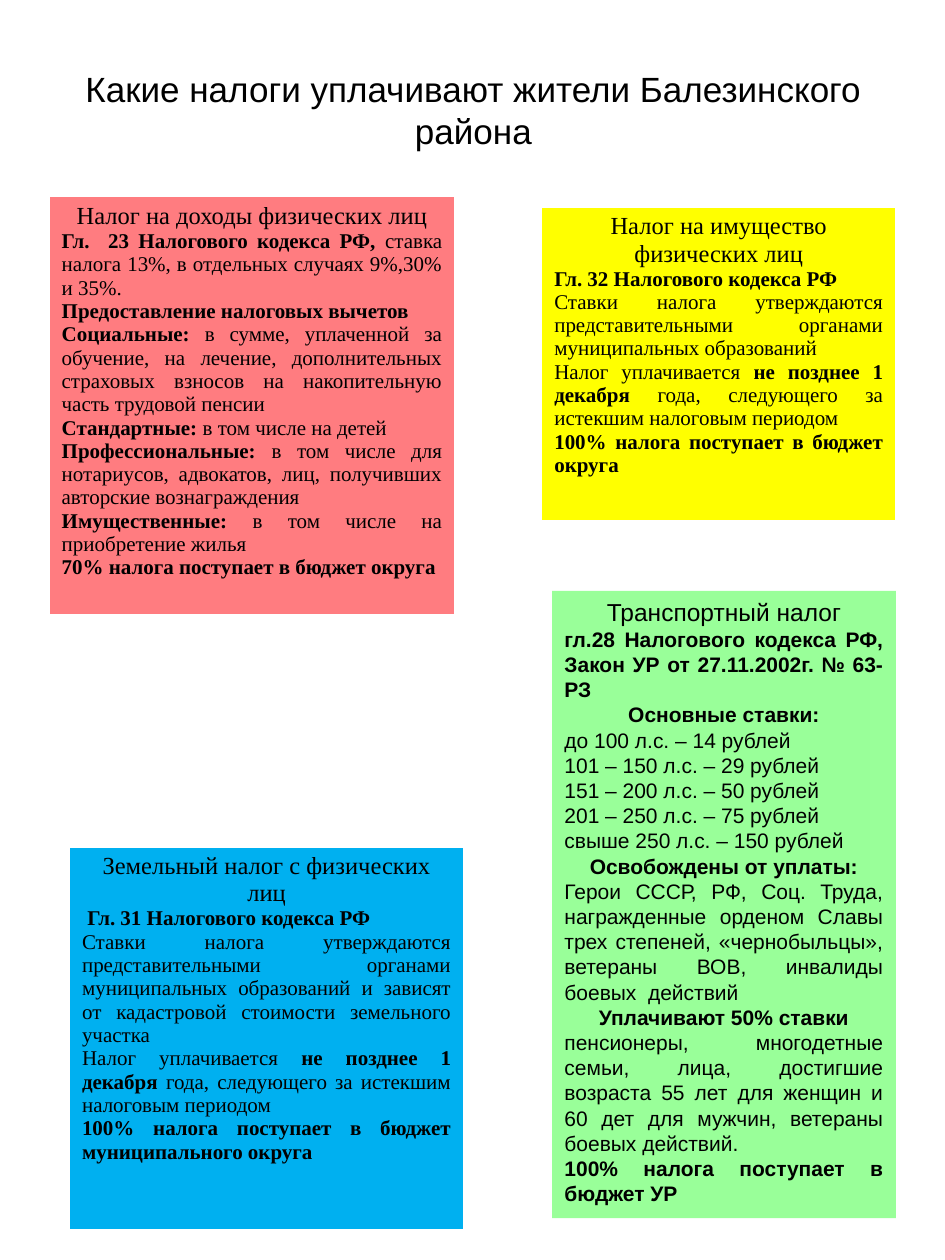
from lxml.etree import SubElement
from pptx import Presentation
from pptx.dml.color import RGBColor
from pptx.enum.shapes import MSO_SHAPE
from pptx.enum.text import MSO_ANCHOR, MSO_AUTO_SIZE, PP_ALIGN
from pptx.oxml.ns import qn
from pptx.util import Cm, Pt


def color(value):
    return RGBColor.from_string(value)


def write(p, text, *, font, size, align=PP_ALIGN.JUSTIFY, hex_color="000000"):
    """Fill a paragraph; parts between ** marks are bold."""
    p.alignment = align
    for i, part in enumerate(text.split("**")):
        if part:
            r = p.add_run()
            r.text = part
            r.font.name, r.font.size = font, Pt(size)
            r.font.bold = i % 2 == 1
            r.font.color.rgb = color(hex_color)


class TaxSlide:
    serif, sans = "Times New Roman", "Arial"
    title_size, heading_size, body_size = 20, 14, 12
    borders = {"a:lnL": 1, "a:lnR": 1, "a:lnT": 1, "a:lnB": 3}

    def __init__(self, prs):
        self.s = prs.slides.add_slide(prs.slide_layouts[6])

    def fill_text(self, tf, heading, lines, font):
        """Centred heading, then justified lines; a leading ^ centres a line."""
        tf.word_wrap = True
        write(tf.paragraphs[0], heading, font=font, size=self.heading_size,
              align=PP_ALIGN.CENTER)
        for line in lines:
            align = PP_ALIGN.CENTER if line.startswith("^") else PP_ALIGN.JUSTIFY
            write(tf.add_paragraph(), line.removeprefix("^"), font=font,
                  size=self.body_size, align=align)

    def title(self, text, box):
        tf = self.s.shapes.add_textbox(*map(Cm, box)).text_frame
        tf.word_wrap = True
        tf.vertical_anchor = MSO_ANCHOR.MIDDLE
        write(tf.paragraphs[0], text, font=self.sans, size=self.title_size,
              align=PP_ALIGN.CENTER)

    def table(self, heading, lines, box, fill):
        cell = self.s.shapes.add_table(1, 1, *map(Cm, box)).table.cell(0, 0)
        self.fill_text(cell.text_frame, heading, lines, self.serif)
        # Borders come before the fill in the cell properties
        tc_pr = cell._tc.get_or_add_tcPr()
        for side, width in self.borders.items():
            ln = SubElement(tc_pr, qn(side), w=str(Pt(width)))
            SubElement(SubElement(ln, qn("a:solidFill")), qn("a:srgbClr"), val="FFFFFF")
        cell.fill.solid()
        cell.fill.fore_color.rgb = color(fill)

    def panel(self, heading, lines, box, fill):
        sp = self.s.shapes.add_shape(MSO_SHAPE.RECTANGLE, *map(Cm, box))
        sp.shadow.inherit = False
        sp.fill.solid()
        sp.fill.fore_color.rgb = color(fill)
        sp.line.fill.background()
        tf = sp.text_frame
        tf.vertical_anchor = MSO_ANCHOR.TOP
        tf.auto_size = MSO_AUTO_SIZE.SHAPE_TO_FIT_TEXT
        self.fill_text(tf, heading, lines, self.sans)


def main():
    prs = Presentation()
    prs.slide_width, prs.slide_height = Cm(19.05), Cm(25.4)
    slide = TaxSlide(prs)

    # Lines shared by the property and land taxes
    rates = "Ставки налога утверждаются представительными органами муниципальных образований"
    deadline = ("Налог уплачивается **не позднее 1 декабря **года, следующего "
                "за истекшим налоговым периодом")

    # Title
    slide.title("Какие налоги уплачивают жители Балезинского района",
                (0.97, 1.02, 17.15, 2.36))

    # Income tax
    slide.table("Налог на доходы физических лиц", [
        "**Гл.  23 Налогового кодекса РФ, **ставка налога 13%, в отдельных случаях 9%,30% и 35%.",
        "**Предоставление налоговых вычетов**",
        "**Социальные:** в сумме, уплаченной за обучение, на лечение, дополнительных "
        "страховых взносов на накопительную часть трудовой пенсии",
        "**Стандартные:** в том числе на детей",
        "**Профессиональные:** в том числе для нотариусов, адвокатов, лиц, "
        "получивших авторские вознаграждения",
        "**Имущественные:** в том числе на приобретение жилья",
        "**70% налога поступает в бюджет округа**",
    ], (0.99, 3.96, 8.18, 7.77), "FF7C80")

    # Property tax
    slide.table("Налог на имущество физических лиц", [
        "**Гл. 32 Налогового кодекса РФ**",
        rates,
        deadline,
        "**100% налога поступает в бюджет округа**",
    ], (10.92, 4.17, 7.14, 6.35), "FFFF00")

    # Land tax
    slide.table("Земельный налог с физических лиц", [
        " **Гл. 31 Налогового кодекса РФ**",
        rates + " и зависят от кадастровой стоимости земельного участка",
        deadline,
        "**100% налога поступает в бюджет муниципального округа**",
    ], (1.4, 17.07, 7.95, 7.75), "00B0F0")

    # Transport tax
    slide.panel("Транспортный налог", [
        "**гл.28 Налогового кодекса РФ, Закон УР от 27.11.2002г. № 63-РЗ**",
        "^**Основные ставки:**",
        "до 100 л.с. – 14 рублей",
        "101 – 150 л.с. – 29 рублей",
        "151 – 200 л.с. – 50 рублей",
        "201 – 250 л.с. – 75 рублей",
        "свыше 250 л.с. – 150 рублей",
        "^**Освобождены от уплаты:**",
        "Герои СССР, РФ, Соц. Труда, награжденные орденом Славы трех степеней, "
        "«чернобыльцы», ветераны ВОВ, инвалиды боевых  действий",
        "^**Уплачивают 50% ставки**",
        "пенсионеры, многодетные семьи, лица, достигшие возраста 55 лет для женщин "
        "и 60 дет для мужчин, ветераны боевых действий.",
        "**100% налога поступает в бюджет УР**",
    ], (11.13, 11.91, 6.93, 12.65), "99FF99")

    prs.save("out.pptx")


if __name__ == "__main__":
    main()
